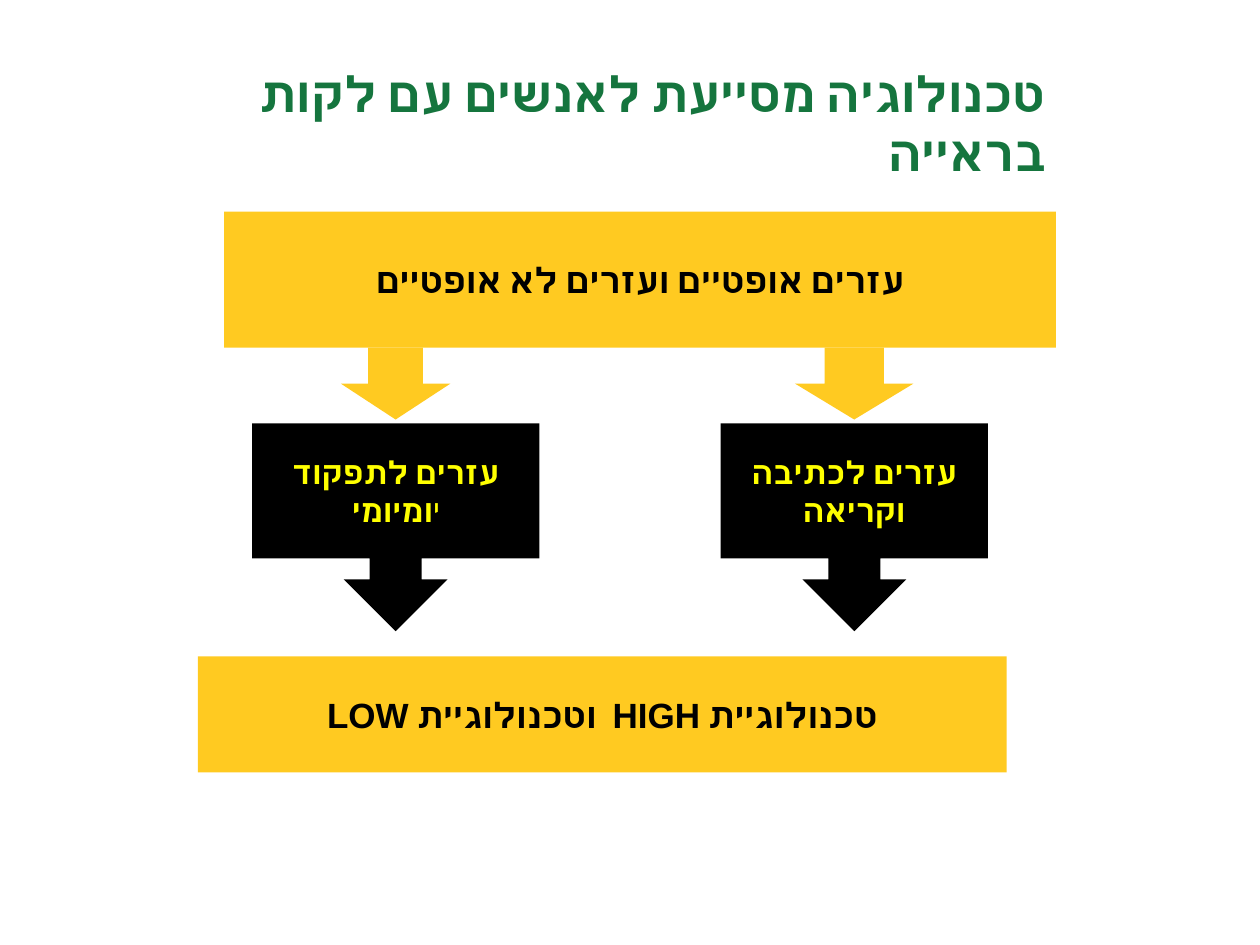
from lxml.etree import SubElement
from pptx import Presentation
from pptx.dml.color import RGBColor
from pptx.enum.shapes import MSO_SHAPE
from pptx.enum.text import MSO_ANCHOR, PP_ALIGN
from pptx.oxml.ns import qn
from pptx.util import Inches, Pt

COLORS = {"green": "15753E", "gold": "FFCA21", "black": "000000", "yellow": "FFFF00"}


def color(name):
    return RGBColor.from_string(COLORS[name])


def write(shape, runs, size, tint, font="Calibri", align=PP_ALIGN.CENTER):
    """Fill a shape with one right-to-left paragraph of (text, bold) runs."""
    frame = shape.text_frame
    frame.word_wrap = True
    frame.vertical_anchor = MSO_ANCHOR.MIDDLE
    para = frame.paragraphs[0]
    para.alignment = align
    para._p.get_or_add_pPr().set("rtl", "1")
    para.font.name = font
    para.font.size = Pt(size)
    para.font.bold = True
    para.font.color.rgb = color(tint)
    # Hebrew letters take the complex-script font
    SubElement(para.font._element, qn("a:cs"), typeface="Calibri")
    for text, bold in runs:
        run = para.add_run()
        run.text = text
        if not bold:
            run.font.bold = False
        run.font.color.rgb = color(tint)


def block(slide, kind, box, fill):
    shape = slide.shapes.add_shape(kind, *map(Inches, box))
    shape.shadow.inherit = False
    shape.fill.solid()
    shape.fill.fore_color.rgb = color(fill)
    shape.line.fill.background()
    return shape


def title(slide, box, text):
    shape = slide.shapes.add_textbox(*map(Inches, box))
    # In a right-to-left paragraph the right edge is the start
    write(shape, [(text, True)], 28, "green", align=PP_ALIGN.RIGHT)


def banner(slide, box, text, font="Calibri"):
    shape = block(slide, MSO_SHAPE.RECTANGLE, box, "gold")
    write(shape, [(text, True)], 20, "black", font)


def branch(slide, mid, top, width, head, runs):
    """A gold arrow above a black callout, both centred on mid."""
    tall, gap = 0.57, 0.6
    block(slide, MSO_SHAPE.DOWN_ARROW, (mid - head / 2, top, head, tall), "gold")
    box = (mid - width / 2, top + gap, width, 1.65)
    write(block(slide, MSO_SHAPE.DOWN_ARROW_CALLOUT, box, "black"), runs, 18, "yellow")


def main():
    deck = Presentation()
    deck.slide_width, deck.slide_height = Inches(10), Inches(7.5)
    slide = deck.slides.add_slide(deck.slide_layouts[6])

    title(slide, (1.16, 0.55, 7.24, 0.84), "טכנולוגיה מסייעת לאנשים עם לקות בראייה")
    # Kinds of aids
    banner(slide, (1.78, 1.68, 6.6, 1.08), "עזרים אופטיים ועזרים לא אופטיים")
    # Uses of the aids
    branch(slide, 6.78, 2.76, 2.12, 0.94, [("עזרים לכתיבה וקריאה", True)])
    branch(slide, 3.14, 2.76, 2.28, 0.87,
           [("עזרים לתפקוד ", True), ("י", False), ("ומיומי", True)])
    # Levels of technology
    banner(slide, (1.57, 5.21, 6.42, 0.92), "טכנולוגיית HIGH  וטכנולוגיית LOW", "Arial")

    deck.save("out.pptx")


if __name__ == "__main__":
    main()
